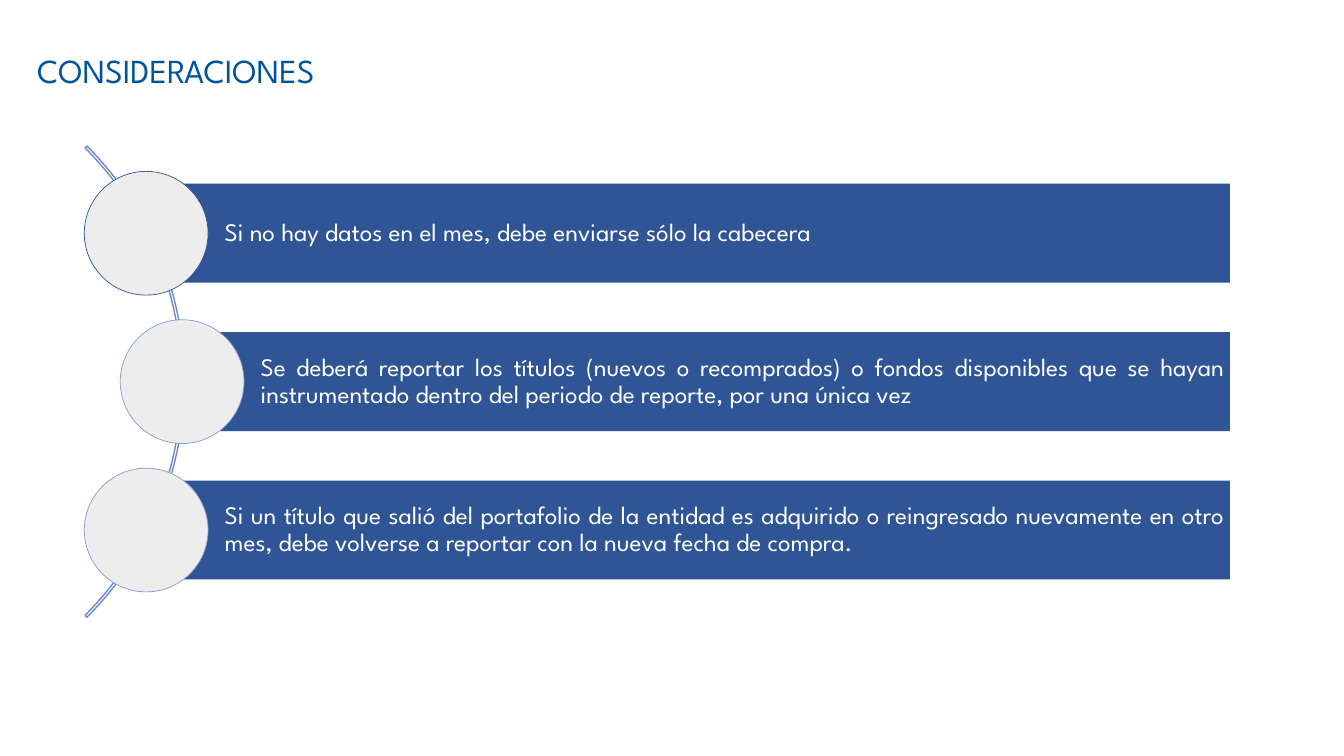
from dataclasses import dataclass

from pptx import Presentation
from pptx import util as u
from pptx.dml.color import RGBColor
from pptx.enum import shapes, text
from pptx.shapes.autoshape import Shape
from pptx.slide import Slide


@dataclass(frozen=True)
class Theme:
    font: str = "League Spartan"
    title_size: float = 24
    body_size: float = 18
    title: str = "00549B"
    bar: str = "2F5597"
    bar_text: str = "FFFFFF"
    circle: str = "EDEDED"
    arc: str = "6D89CB"


@dataclass(frozen=True)
class Consideration:
    wording: str
    center_x: float
    outline: str


THEME = Theme()
CENTER_Y = 272.6
PITCH = 106
BAR_RIGHT = 878.6
BAR_HEIGHT = 70.7
CIRCLE_SIZE = 88.4
ARC_CENTER_X = -106.2
ARC_SIZE = 476

CONSIDERATIONS = [
    Consideration("Si no hay datos en el mes, debe enviarse sólo la cabecera", 104.4, "325491"),
    Consideration(
        "Se deberá reportar los títulos (nuevos o recomprados) o fondos disponibles que se hayan "
        "instrumentado dentro del periodo de reporte, por una única vez", 130.1, "879BCE"),
    Consideration(
        "Si un título que salió del portafolio de la entidad es adquirido o reingresado nuevamente "
        "en otro mes, debe volverse a reportar con la nueva fecha de compra.", 104.4, "879BCE"),
]


def add_shape(slide: Slide, kind: shapes.MSO_SHAPE, left: float, top: float,
              width: float, height: float, fill: str = "", outline: str = "",
              weight: float = 0.5) -> Shape:
    shape = slide.shapes.add_shape(kind, u.Pt(left), u.Pt(top), u.Pt(width), u.Pt(height))
    shape.shadow.inherit = False
    if fill:
        shape.fill.solid()
        shape.fill.fore_color.rgb = RGBColor.from_string(fill)
    else:
        shape.fill.background()
    if outline:
        shape.line.color.rgb = RGBColor.from_string(outline)
        shape.line.width = u.Pt(weight)
    else:
        shape.line.fill.background()
    return shape


def write(shape: Shape, wording: str, size: float, color: str,
          alignment: text.PP_ALIGN) -> None:
    frame = shape.text_frame
    frame.word_wrap = True
    frame.auto_size = text.MSO_AUTO_SIZE.NONE
    frame.vertical_anchor = text.MSO_ANCHOR.MIDDLE
    frame.text = wording
    paragraph = frame.paragraphs[0]
    paragraph.alignment = alignment
    paragraph.line_spacing = 0.9
    paragraph.font.name = THEME.font
    paragraph.font.size = u.Pt(size)
    paragraph.font.color.rgb = RGBColor.from_string(color)


def add_title(slide: Slide, wording: str) -> None:
    title = slide.shapes.title
    title.left, title.top, title.width, title.height = u.Pt(19.4), u.Pt(0), u.Pt(828), u.Pt(104.4)
    write(title, wording, THEME.title_size, THEME.title, text.PP_ALIGN.LEFT)


def add_arc(slide: Slide) -> None:
    arc = add_shape(slide, shapes.MSO_SHAPE.BLOCK_ARC, ARC_CENTER_X - ARC_SIZE / 2,
                    CENTER_Y - ARC_SIZE / 2, ARC_SIZE, ARC_SIZE, outline=THEME.arc, weight=1)
    for index, value in enumerate((189, 27, 0.004)):
        arc.adjustments[index] = value


def add_consideration(slide: Slide, item: Consideration, center_y: float) -> None:
    bar = add_shape(slide, shapes.MSO_SHAPE.RECTANGLE, item.center_x, center_y - BAR_HEIGHT / 2,
                    BAR_RIGHT - item.center_x, BAR_HEIGHT, THEME.bar)
    write(bar, item.wording, THEME.body_size, THEME.bar_text, text.PP_ALIGN.JUSTIFY)
    frame = bar.text_frame
    frame.margin_left = u.Pt(56.1)
    frame.margin_top = frame.margin_right = frame.margin_bottom = u.Pt(3.6)
    add_shape(slide, shapes.MSO_SHAPE.OVAL, item.center_x - CIRCLE_SIZE / 2,
              center_y - CIRCLE_SIZE / 2, CIRCLE_SIZE, CIRCLE_SIZE, THEME.circle, item.outline)


def main() -> None:
    presentation = Presentation()
    presentation.slide_width, presentation.slide_height = u.Pt(960), u.Pt(540)
    slide = presentation.slides.add_slide(presentation.slide_layouts[5])
    add_title(slide, "CONSIDERACIONES")
    add_arc(slide)
    for row, item in enumerate(CONSIDERATIONS):
        add_consideration(slide, item, CENTER_Y + (row - 1) * PITCH)
    presentation.save("out.pptx")


if __name__ == "__main__":
    main()
